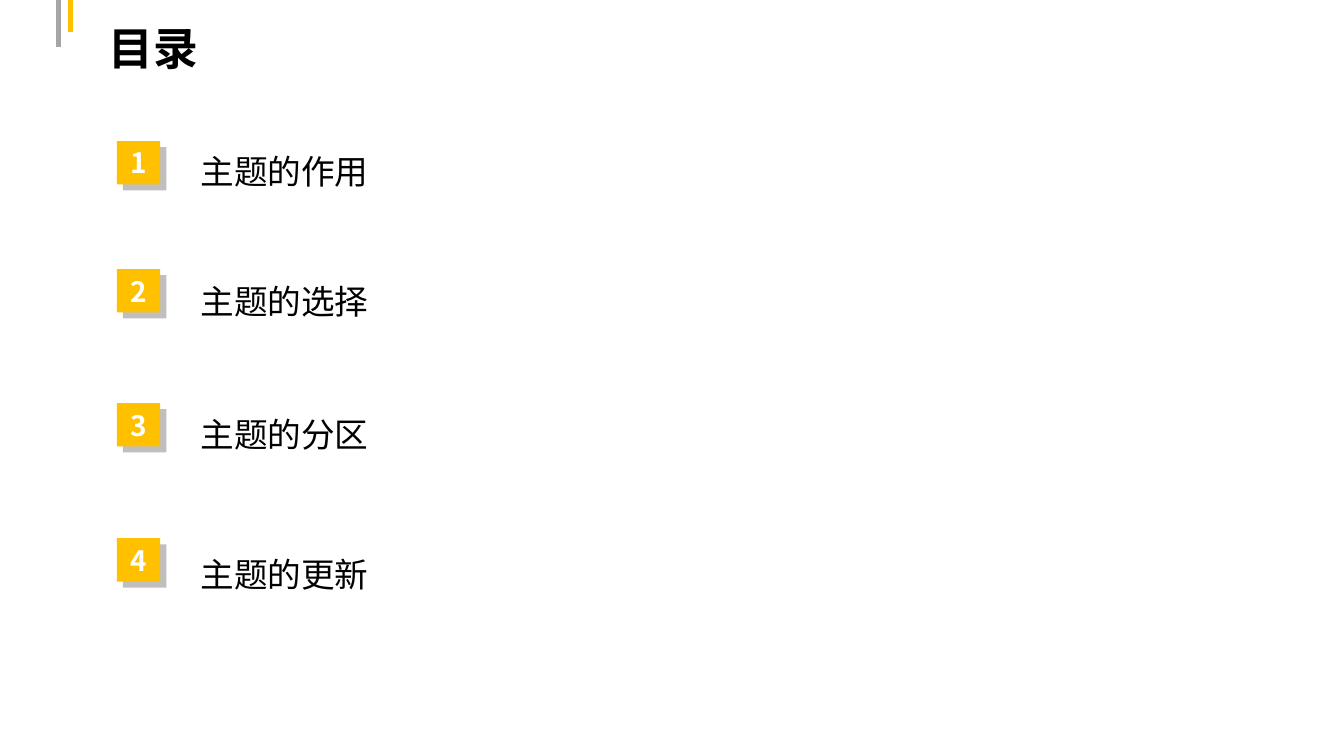
from dataclasses import dataclass

from lxml.etree import SubElement
from pptx import Presentation
from pptx.dml.color import RGBColor
from pptx.enum.shapes import MSO_CONNECTOR, MSO_SHAPE
from pptx.enum.text import MSO_ANCHOR, MSO_AUTO_SIZE, PP_ALIGN
from pptx.oxml.ns import qn
from pptx.util import Inches, Pt


@dataclass(frozen=True)
class Theme:
    accent: RGBColor = RGBColor(0xFF, 0xC0, 0x00)
    gray: RGBColor = RGBColor(0xA5, 0xA5, 0xA5)
    black: RGBColor = RGBColor(0, 0, 0)
    white: RGBColor = RGBColor(0xFF, 0xFF, 0xFF)
    sans: str = "Noto Sans CJK SC"
    serif: str = "Times New Roman"
    title_size: int = 32
    topic_size: int = 24
    number_size: int = 20
    stripe_width: int = 3
    shadow_alpha: int = 25


THEME = Theme()

# topic, top of its number badge, top of its text
TOPICS = [
    ("主题的作用", 1.4, 1.25),
    ("主题的选择", 2.67, 2.54),
    ("主题的分区", 4.0, 3.86),
    ("主题的更新", 5.34, 5.25),
]


def write(frame, text, size, color, font=THEME.sans, bold=False, **paragraph_format):
    """Fill a text frame with one run, with a separate East Asian font."""
    paragraph = frame.paragraphs[0]
    for name, value in paragraph_format.items():
        setattr(paragraph, name, value)
    run = paragraph.add_run()
    run.text = text
    for name, value in {"size": Pt(size), "bold": bold, "name": font}.items():
        setattr(run.font, name, value)
    run.font.color.rgb = color
    SubElement(run.font._element, qn("a:ea")).set("typeface", THEME.sans)


def add_text_box(slide, left, top, width, height):
    box = slide.shapes.add_textbox(*map(Inches, (left, top, width, height)))
    box.text_frame.word_wrap = True
    return box.text_frame


def add_square(shapes, left, top, side, color):
    square = shapes.add_shape(MSO_SHAPE.RECTANGLE, *map(Inches, (left, top, side, side)))
    square.shadow.inherit = False
    square.fill.solid()
    square.fill.fore_color.rgb = color
    square.line.fill.background()
    return square


def add_stripes(slide, left):
    """Hang two vertical stripes from the top edge of the slide."""
    stripes = slide.shapes.add_group_shape().shapes
    for offset, length, color in ((0, 0.47, THEME.gray), (0.12, 0.32, THEME.accent)):
        x = Inches(left + offset)
        stripe = stripes.add_connector(MSO_CONNECTOR.STRAIGHT, x, Inches(length), x, 0)
        stripe.line.color.rgb = color
        stripe.line.width = Pt(THEME.stripe_width)
        SubElement(stripe._element.spPr, qn("a:effectLst"))


def add_title(slide, left, top, width, height):
    frame = add_text_box(slide, left, top, width, height)
    frame.vertical_anchor = MSO_ANCHOR.MIDDLE
    write(frame, "目录", THEME.title_size, THEME.black, THEME.serif, True, line_spacing=0.9)


def add_badge(slide, number, left, top, side=0.43, shift=0.06):
    """Place a numbered square over its offset translucent shadow."""
    shapes = slide.shapes.add_group_shape().shapes
    shade = add_square(shapes, left + shift, top + shift, side, THEME.black)
    shade_color = shade.fill._xPr.find(qn("a:solidFill"))[0]
    SubElement(shade_color, qn("a:alpha")).set("val", str(THEME.shadow_alpha * 1000))

    frame = add_square(shapes, left, top, side, THEME.accent).text_frame
    for margin in ("margin_left", "margin_right", "margin_top", "margin_bottom"):
        setattr(frame, margin, 0)
    frame.vertical_anchor = MSO_ANCHOR.MIDDLE
    write(frame, str(number), THEME.number_size, THEME.white, bold=True,
          alignment=PP_ALIGN.CENTER)


def add_topic(slide, topic, left, top, width=5.59, height=0.64):
    frame = add_text_box(slide, left, top, width, height)
    frame.auto_size = MSO_AUTO_SIZE.SHAPE_TO_FIT_TEXT
    write(frame, topic, THEME.topic_size, THEME.black, line_spacing=1.5)


def add_contents_slide(deck):
    slide = deck.slides.add_slide(deck.slide_layouts[6])
    add_title(slide, 0.98, -0.12, 3.84, 1.25)
    for number, (topic, badge_top, topic_top) in enumerate(TOPICS, 1):
        add_badge(slide, number, 1.16, badge_top)
        add_topic(slide, topic, 1.89, topic_top)
    add_stripes(slide, 0.58)


def main():
    deck = Presentation()
    deck.slide_width, deck.slide_height = Inches(13.33), Inches(7.5)
    add_contents_slide(deck)
    deck.save("out.pptx")


if __name__ == "__main__":
    main()
